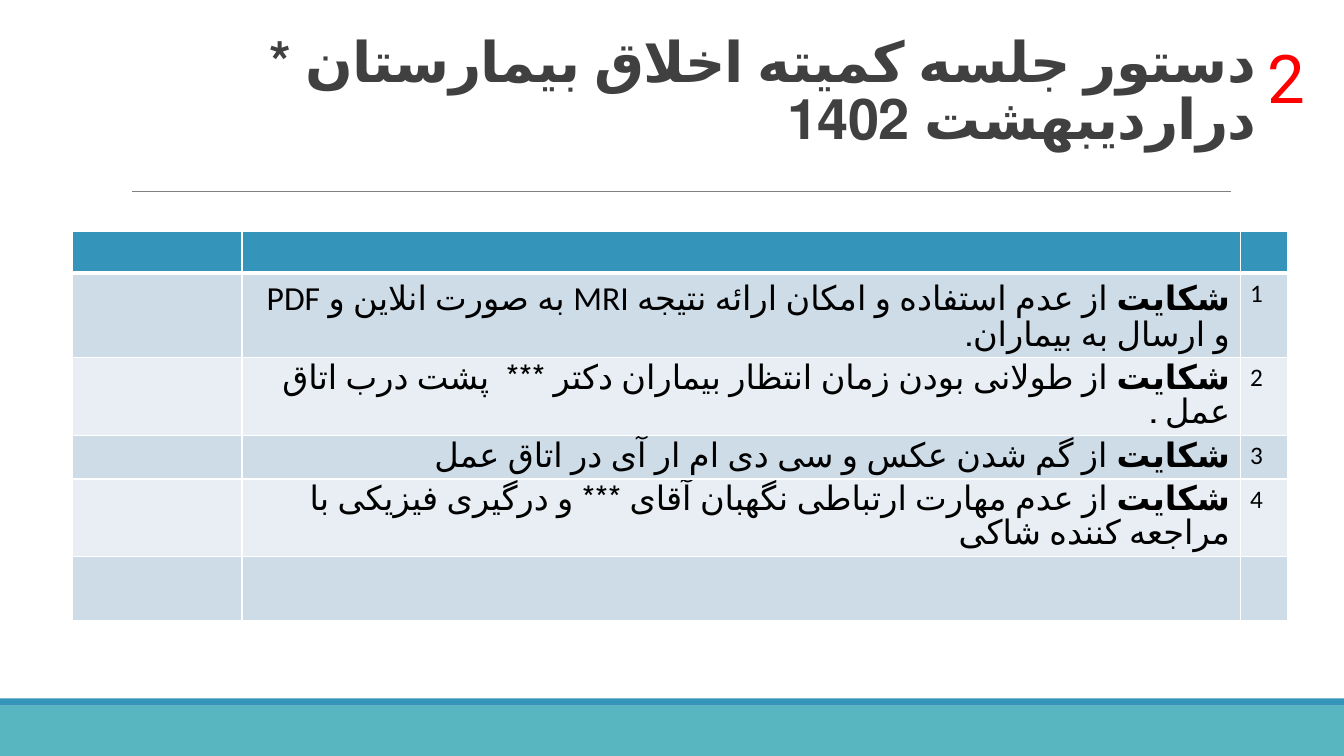
from lxml import etree
from pptx import Presentation
from pptx.dml.color import RGBColor
from pptx.enum import lang, shapes, text
from pptx.oxml import ns
from pptx.util import Inches, Pt

WHITE = RGBColor(0xFF, 0xFF, 0xFF)
BLACK = RGBColor(0, 0, 0)
RED = RGBColor(0xFF, 0, 0)
DARK = RGBColor(0x40, 0x40, 0x40)
GREY = RGBColor(0x80, 0x80, 0x80)
BLUE = RGBColor(0x34, 0x94, 0xBA)
TEAL = RGBColor(0x58, 0xB6, 0xC0)
BANDS = (RGBColor(0xCE, 0xDC, 0xE7), RGBColor(0xE8, 0xEE, 0xF3))

COLUMNS = (1.68, 9.9, 0.47)
ROWS = (0.41, 0.83, 0.76, 0.43, 0.77, 0.64)
FARSI = lang.MSO_LANGUAGE_ID.FARSI
COMPLAINT = "شکایت"
AGENDA = (
    ((" از عدم استفاده و امکان ارائه نتیجه MRI به صورت انلاین و PDF و ارسال به بیماران.", 24, False),),
    ((" از طولانی بودن زمان انتظار بیماران دکتر ***  پشت درب اتاق عمل ", 24, False), (".", 18, True)),
    ((" از گم شدن عکس و سی دی ام ار آی در اتاق عمل ", 24, False),),
    ((" از عدم مهارت ارتباطی نگهبان آقای *** و درگیری فیزیکی با مراجعه کننده شاکی", 24, False),),
)


def add_run(p, words, size, color, bold=False, font="Calibri", spacing=None, language=None):
    """Append one formatted run to a paragraph."""
    r = p.add_run()
    r.text = words
    r.font.size, r.font.bold, r.font.name = Pt(size), bold, font
    r.font.color.rgb = color
    if language is not None:
        r.font.language_id = language
    if spacing is not None:
        r.font._element.set("spc", str(round(spacing * 100)))


def set_rtl(p):
    """Make a paragraph run from right to left, aligned right."""
    p.alignment = text.PP_ALIGN.RIGHT
    p._p.get_or_add_pPr().set("rtl", "1")


def add_bar(s, left, top, width, height, color):
    """Draw one plain filled band."""
    sp = s.shapes.add_shape(shapes.MSO_SHAPE.RECTANGLE, Inches(left), Inches(top),
                            Inches(width), Inches(height))
    sp.shadow.inherit = False
    sp.fill.solid()
    sp.fill.fore_color.rgb = color
    sp.line.fill.background()


def add_footer(s, left, top, width, height):
    """Draw the footer band with its thin strip on top."""
    strip = 0.07
    add_bar(s, left, top + strip, width, height - strip, TEAL)
    add_bar(s, left, top, width, strip, BLUE)


def add_rule(s, left, top, width):
    """Draw the thin line below the title."""
    line = s.shapes.add_connector(shapes.MSO_CONNECTOR.STRAIGHT, Inches(left), Inches(top),
                                  Inches(left + width), Inches(top))
    line.line.color.rgb = GREY
    line.line.width = Pt(0.5)
    etree.SubElement(line._element.spPr, ns.qn("a:effectLst"))


def add_title(s, left, top, width, height):
    """Fill and place the title placeholder."""
    sp = s.shapes.title
    sp.left, sp.top, sp.width, sp.height = map(Inches, (left, top, width, height))
    tf = sp.text_frame
    tf.word_wrap = True
    tf.auto_size = text.MSO_AUTO_SIZE.NONE
    tf.vertical_anchor = text.MSO_ANCHOR.BOTTOM
    p = tf.paragraphs[0]
    set_rtl(p)
    p.line_spacing = 0.85
    add_run(p, "دستور جلسه کمیته اخلاق بیمارستان * دراردیبهشت 1402 ", 40, DARK, True,
            spacing=-0.5, language=FARSI)


def add_page_number(s, left, top, width, height):
    """Place the large page number."""
    sp = s.shapes.add_textbox(Inches(left), Inches(top), Inches(width), Inches(height))
    tf = sp.text_frame
    tf.word_wrap = True
    tf.vertical_anchor = text.MSO_ANCHOR.BOTTOM
    p = tf.paragraphs[0]
    p.alignment = text.PP_ALIGN.CENTER
    p.line_spacing = 0.85
    add_run(p, "2", 48, RED, font="Roboto", spacing=-0.5)


def style_cell(cell, color, bottom):
    """Fill a cell and give it white borders."""
    cell.fill.solid()
    cell.fill.fore_color.rgb = color
    tc_pr = cell._tc.get_or_add_tcPr()
    for i, (side, width) in enumerate((("L", 1), ("R", 1), ("T", 1), ("B", bottom))):
        ln = etree.Element(ns.qn(f"a:ln{side}"), w=str(Pt(width)))
        fill = etree.SubElement(ln, ns.qn("a:solidFill"))
        etree.SubElement(fill, ns.qn("a:srgbClr"), val=str(WHITE))
        tc_pr.insert(i, ln)


def add_agenda(s, left, top):
    """Build the numbered table of complaints."""
    table = s.shapes.add_table(len(ROWS), len(COLUMNS), Inches(left), Inches(top),
                               Inches(sum(COLUMNS)), Inches(sum(ROWS))).table
    for column, width in zip(table.columns, COLUMNS):
        column.width = Inches(width)
    for i, height in enumerate(ROWS):
        table.rows[i].height = Inches(height)
        for cell in table.rows[i].cells:
            style_cell(cell, BANDS[(i - 1) % 2] if i else BLUE, 1 if i else 3)
    for i, parts in enumerate(AGENDA, 1):
        p = table.cell(i, 1).text_frame.paragraphs[0]
        set_rtl(p)
        add_run(p, COMPLAINT, 24, BLACK, True, language=FARSI)
        for words, size, bold in parts:
            add_run(p, words, size, BLACK, bold, language=FARSI)
        add_run(table.cell(i, 2).text_frame.paragraphs[0], str(i), 18, BLACK)


def main():
    """Build the slide and save it."""
    prs = Presentation()
    prs.slide_width, prs.slide_height = Inches(13.33), Inches(7.5)
    s = prs.slides.add_slide(prs.slide_layouts[5])
    add_footer(s, 0, 6.93, 13.33, 0.57)
    add_rule(s, 1.31, 1.9, 10.9)
    add_title(s, 1.17, 0.7, 11.39, 0.85)
    add_agenda(s, 0.72, 2.3)
    add_page_number(s, 12.27, 0.13, 0.97, 1.08)
    prs.save("out.pptx")


if __name__ == "__main__":
    main()
